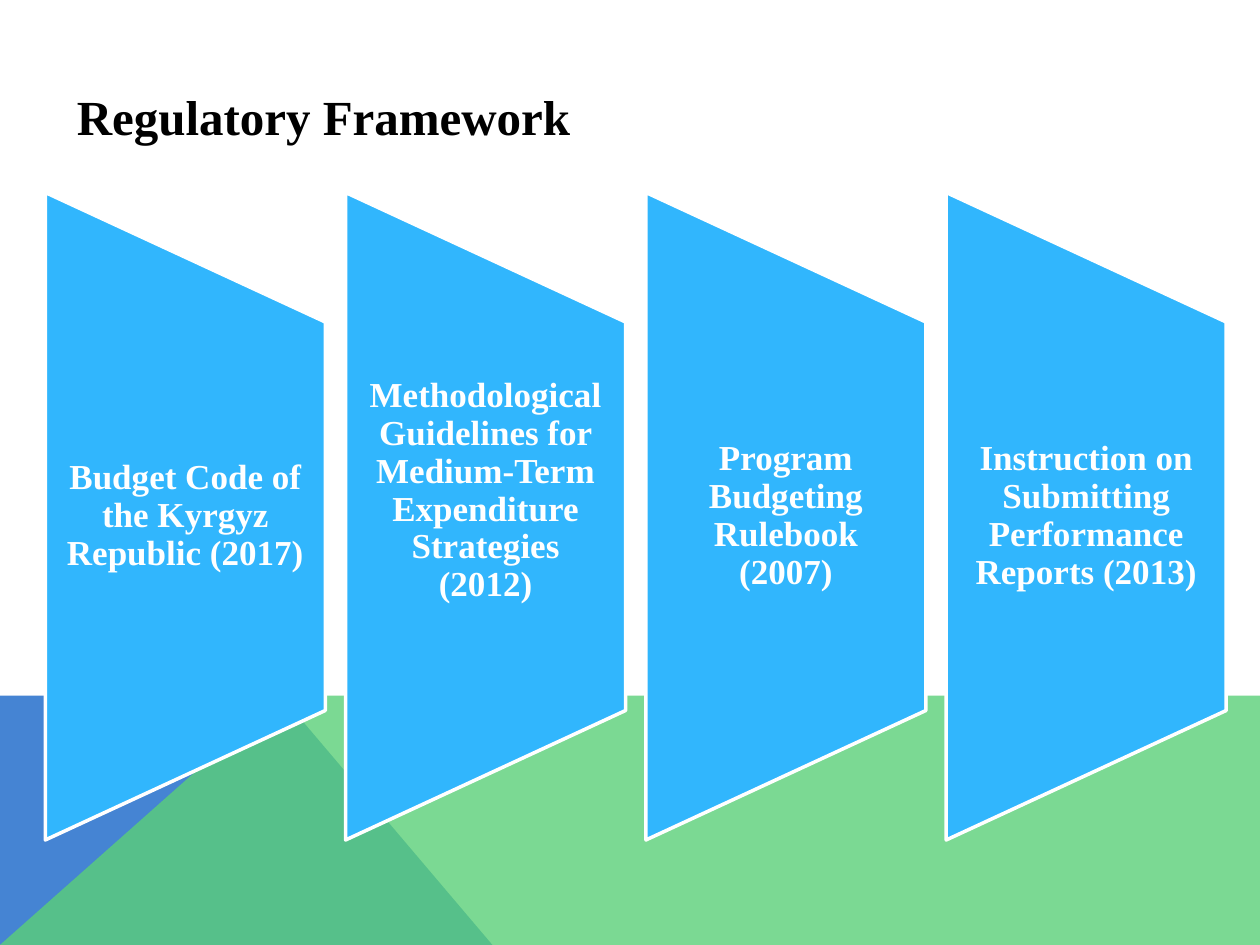
from lxml.etree import SubElement
from pptx import Presentation
from pptx.dml.color import RGBColor
from pptx.enum.shapes import MSO_SHAPE
from pptx.enum.text import MSO_ANCHOR, PP_ALIGN
from pptx.oxml.ns import qn
from pptx.util import Pt

SLIDE_WIDTH, SLIDE_HEIGHT = 720, 540
HORIZON, RIDGE = 397.6, 160.6
PANEL_LEFT, PANEL_PITCH = 25.9, 171.6
PANEL_WIDTH, PANEL_HEIGHT, PANEL_MIDDLE = 160, 370, 295
CAPTION_HEIGHT = 222
REGULATIONS = [
    ("Budget Code of the Kyrgyz Republic (2017)", 0),
    ("Methodological Guidelines for Medium-Term Expenditure Strategies (2012)", 29),
    ("Program Budgeting Rulebook (2007)", 0),
    ("Instruction on Submitting Performance Reports (2013)", 0),
]


def rgb(code):
    return RGBColor.from_string(code)


def apply(target, values):
    for name, value in values.items():
        setattr(target, name, value)


def paint(surface, color):
    surface.shadow.inherit = False
    surface.fill.solid()
    surface.fill.fore_color.rgb = rgb(color)


def write(frame, wording, size, color, frame_format, paragraph_format):
    apply(frame, frame_format)
    frame.text = wording
    paragraph = frame.paragraphs[0]
    apply(paragraph, paragraph_format)
    apply(paragraph.font, {"name": "Times New Roman", "size": Pt(size), "bold": True})
    paragraph.font.color.rgb = rgb(color)


def add_field(slide, corners, color, opacity=100):
    points = [(Pt(x), Pt(y)) for x, y in corners]
    builder = slide.shapes.build_freeform(*points[0], scale=1.0)
    builder.add_line_segments(points[1:], close=True)
    field = builder.convert_to_shape()
    paint(field, color)
    field.line.fill.background()
    if opacity < 100:
        tint = field.fill._xPr.find(qn("a:solidFill"))[0]
        SubElement(tint, qn("a:alpha"), val=str(opacity * 1000))


def add_title(slide, wording):
    title = slide.shapes.title
    apply(title, {"left": Pt(36.7), "top": Pt(-2), "width": Pt(648), "height": Pt(136)})
    write(title.text_frame, wording, 28, "000000",
          {"vertical_anchor": MSO_ANCHOR.MIDDLE}, {"alignment": PP_ALIGN.LEFT})


def add_panel(slide, left):
    panel = slide.shapes.add_shape(
        MSO_SHAPE.FLOWCHART_MANUAL_OPERATION,
        Pt(left + (PANEL_WIDTH - PANEL_HEIGHT) / 2), Pt(PANEL_MIDDLE - PANEL_WIDTH / 2),
        Pt(PANEL_HEIGHT), Pt(PANEL_WIDTH))
    panel.rotation = 270
    paint(panel, "31B6FD")
    panel.line.color.rgb = rgb("FFFFFF")
    panel.line.width = Pt(2)


def add_caption(slide, left, wording, bottom_inset):
    caption = slide.shapes.add_textbox(
        Pt(left), Pt(PANEL_MIDDLE - CAPTION_HEIGHT / 2), Pt(PANEL_WIDTH), Pt(CAPTION_HEIGHT))
    write(caption.text_frame, wording, 20, "FFFFFF",
          {"word_wrap": True, "vertical_anchor": MSO_ANCHOR.MIDDLE,
           "margin_left": Pt(10), "margin_right": Pt(10),
           "margin_top": Pt(0), "margin_bottom": Pt(bottom_inset)},
          {"alignment": PP_ALIGN.CENTER, "line_spacing": 0.9})


def main():
    deck = Presentation()
    apply(deck, {"slide_width": Pt(SLIDE_WIDTH), "slide_height": Pt(SLIDE_HEIGHT)})
    slide = deck.slides.add_slide(deck.slide_layouts[5])
    add_field(slide, [(0, SLIDE_HEIGHT), (0, HORIZON), (RIDGE, HORIZON),
                      (281.4, SLIDE_HEIGHT)], "4584D3")
    add_field(slide, [(0, SLIDE_HEIGHT), (RIDGE, HORIZON), (SLIDE_WIDTH, HORIZON),
                      (SLIDE_WIDTH, SLIDE_HEIGHT)], "5BD078", 80)
    add_title(slide, "Regulatory Framework")
    for index, (wording, bottom_inset) in enumerate(REGULATIONS):
        left = PANEL_LEFT + index * PANEL_PITCH
        add_panel(slide, left)
        add_caption(slide, left, wording, bottom_inset)
    deck.save("out.pptx")


if __name__ == "__main__":
    main()
